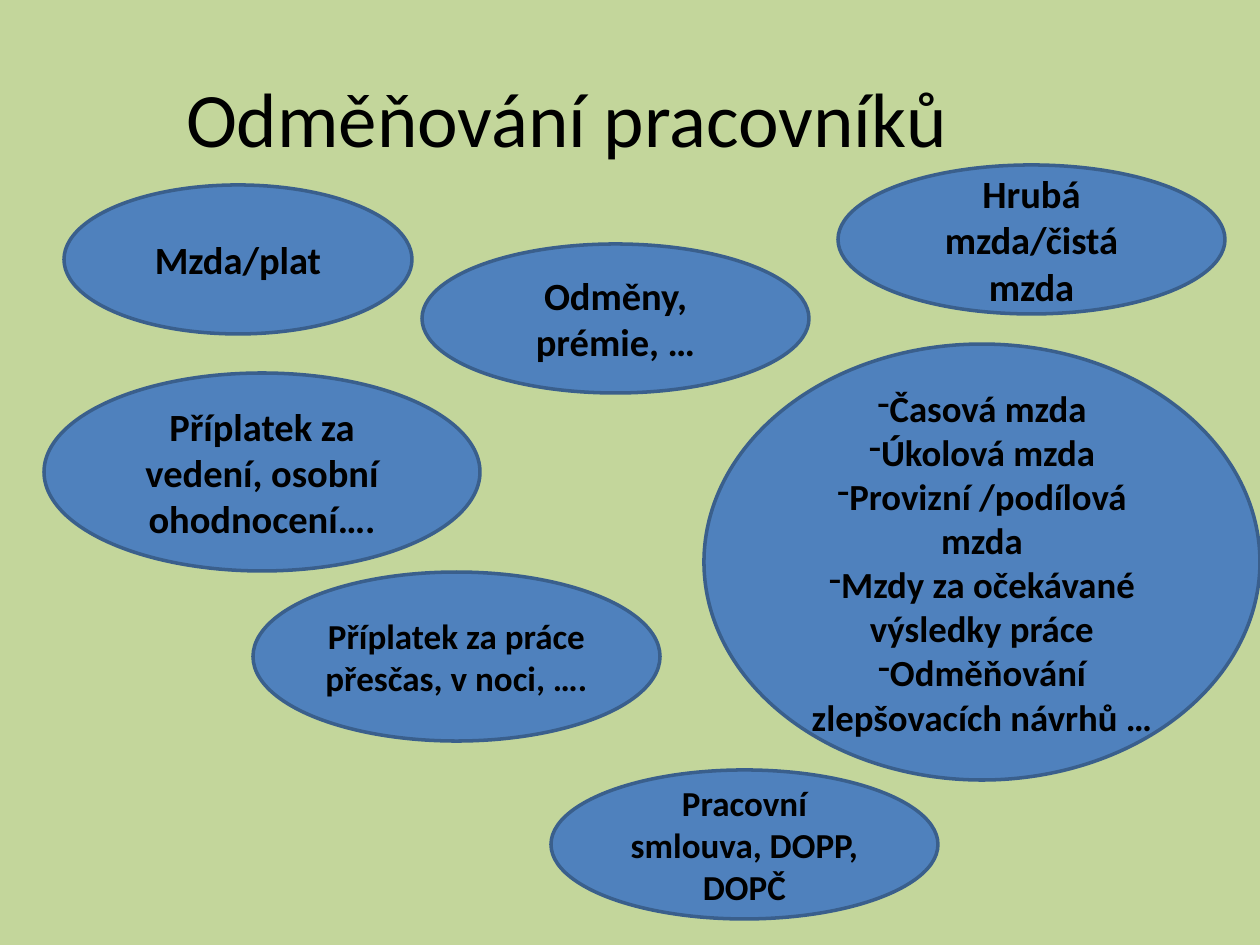
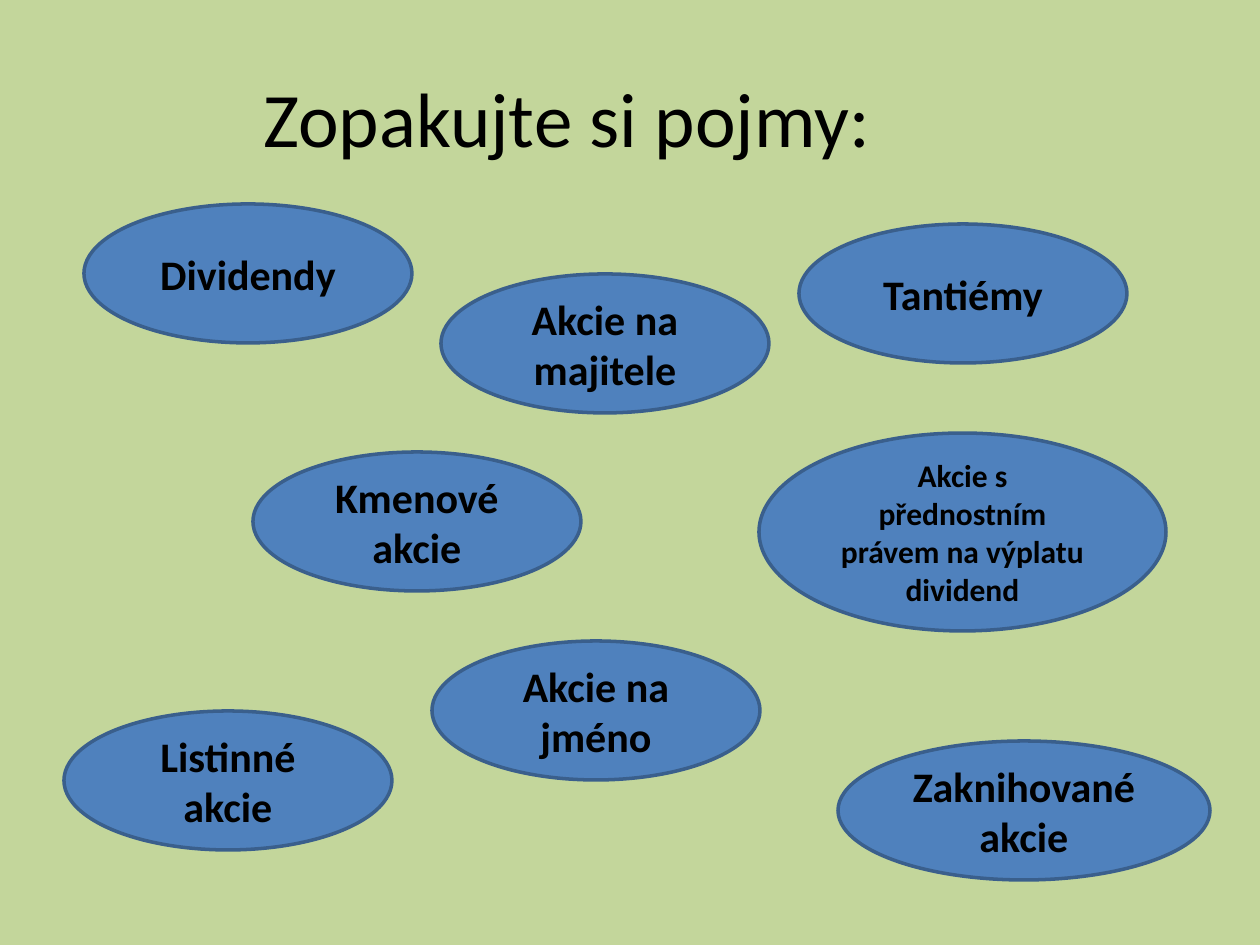
from lxml import etree
from pptx import Presentation
from pptx import util as u
from pptx.dml.color import RGBColor
from pptx.enum import shapes, text
from pptx.oxml import ns

EMU_PER_PX = 914400 / 126


def px(length):
    return u.Emu(round(length * EMU_PER_PX))


def color(hex_code):
    return RGBColor.from_string(hex_code)


class Deck:
    """Holds the shared style and the slide being filled."""

    font = "Calibri"
    background, ink = "C3D69B", "000000"
    bubble_fill, bubble_line = "4F81BD", "3A5F8C"

    def __init__(self):
        self.prs = Presentation()
        self.prs.slide_width, self.prs.slide_height = px(1260), px(945)
        self.slide = None

    def new_slide(self, title):
        self.slide = self.prs.slides.add_slide(self.prs.slide_layouts[6])
        fill = self.slide.background.fill
        fill.solid()
        fill.fore_color.rgb = color(self.background)
        heading = self.slide.shapes.add_textbox(px(0), px(38), px(1134), px(158))
        self.set_text(heading.text_frame, title, 44)

    def set_text(self, frame, content, size, bold=False):
        frame.text = content
        frame.word_wrap = True
        frame.vertical_anchor = text.MSO_ANCHOR.MIDDLE
        for paragraph in frame.paragraphs:
            paragraph.alignment = text.PP_ALIGN.CENTER
            for run in paragraph.runs:
                run.font.name = self.font
                run.font.size = u.Pt(size)
                run.font.bold = bold
                run.font.color.rgb = color(self.ink)

    def bubble(self, content, left, top, width, height, size):
        oval = self.slide.shapes.add_shape(
            shapes.MSO_SHAPE.OVAL, px(left), px(top), px(width), px(height))
        oval.shadow.inherit = False
        oval.fill.solid()
        oval.fill.fore_color.rgb = color(self.bubble_fill)
        oval.line.color.rgb = color(self.bubble_line)
        oval.line.width = u.Pt(2)
        self.set_text(oval.text_frame, content, size, bold=True)
        return oval

    def dashed_bubble(self, items, *place):
        """Add a bubble whose paragraphs are a dash list."""
        oval = self.bubble("\n".join(items), *place)
        for paragraph in oval.text_frame.paragraphs:
            props = paragraph._p.get_or_add_pPr()
            props.set("marL", "0")
            props.set("indent", "0")
            etree.SubElement(props, ns.qn("a:buFontTx"))
            etree.SubElement(props, ns.qn("a:buChar")).set("char", "-")


def pay_slide(deck):
    deck.new_slide("Odměňování pracovníků")
    deck.bubble("Mzda/plat", 64, 185, 348, 149, 22)
    deck.bubble("Hrubá mzda/čistá mzda", 838, 165, 387, 149, 22)
    deck.bubble("Odměny, prémie, …", 422, 244, 387, 149, 22)
    deck.bubble("Příplatek za vedení, osobní ohodnocení….", 44, 373, 436, 198, 22)
    wage_types = ["Časová mzda", "Úkolová mzda", "Provizní /podílová mzda",
                  "Mzdy za očekávané výsledky práce",
                  "Odměňování zlepšovacích návrhů …"]
    deck.dashed_bubble(wage_types, 704, 344, 556, 436, 21)
    deck.bubble("Příplatek za práce přesčas, v noci, ….", 253, 572, 407, 169, 20)
    deck.bubble("Pracovní smlouva, DOPP, DOPČ", 551, 770, 387, 149, 20)


def terms_slide(deck):
    deck.new_slide("Zopakujte si pojmy:")
    terms = [
        ("Dividendy", 84, 204, 328),
        ("Kmenové akcie", 253, 452, 328),
        ("Akcie na jméno", 432, 641, 328),
        ("Akcie na majitele", 441, 274, 328),
        ("Tantiémy", 799, 224, 328),
        ("Zaknihované akcie", 838, 741, 372),
        ("Listinné akcie", 64, 711, 328),
    ]
    for term, left, top, width in terms:
        deck.bubble(term, left, top, width, 139, 24)
    deck.bubble("Akcie s přednostním právem na výplatu dividend",
                759, 433, 407, 198, 18)


def main():
    deck = Deck()
    pay_slide(deck)
    terms_slide(deck)
    deck.prs.save("out.pptx")


if __name__ == "__main__":
    main()
